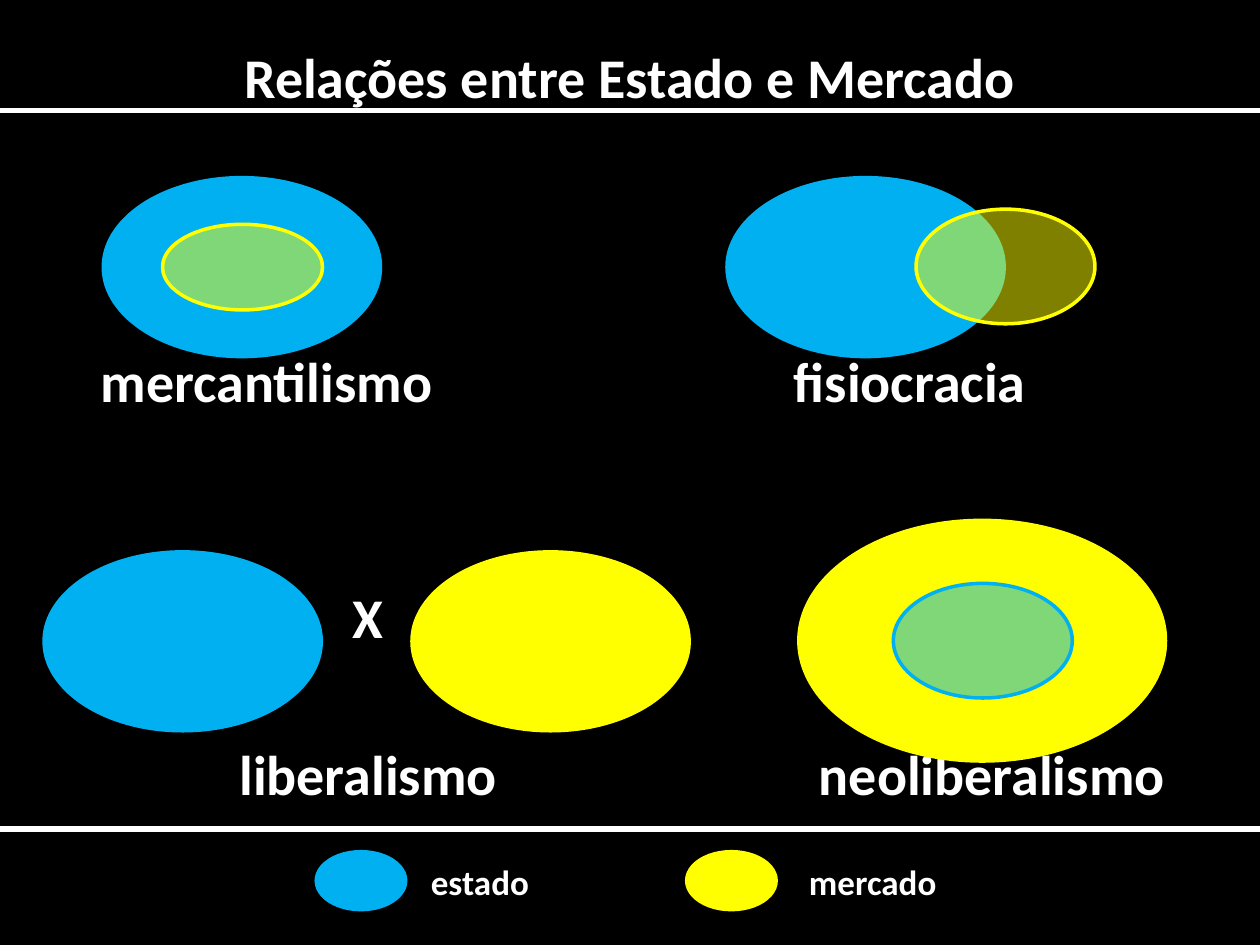
"""Build a slide on how state and market relate in four doctrines."""
import dataclasses

import lxml.etree
import pptx
import pptx.dml.color
import pptx.enum.shapes
import pptx.enum.text
import pptx.oxml.ns
import pptx.util

Inches = pptx.util.Inches
Pt = pptx.util.Pt
Align = pptx.enum.text.PP_ALIGN
Anchor = pptx.enum.text.MSO_ANCHOR


def tint(code):
    """Turn a hex code into a colour."""
    return pptx.dml.color.RGBColor.from_string(code)


def put(target, values):
    """Set each attribute of target from a dict."""
    for name, value in values.items():
        setattr(target, name, value)


@dataclasses.dataclass(frozen=True)
class Theme:
    """Colours, font and sizes of the slide."""

    back: str = "000000"
    ink: str = "FFFFFF"
    state: str = "00B0F0"
    market: str = "FFFF00"
    font: str = "Calibri"
    large: int = 32
    small: int = 20
    edge: int = 2
    rule: int = 3


@dataclasses.dataclass
class Board:
    """Hold the theme and the current slide, and draw on it."""

    theme: Theme
    slide: object

    def ground(self):
        """Fill the background."""
        fill = self.slide.background.fill
        fill.solid()
        fill.fore_color.rgb = tint(self.theme.back)

    def letter(self, shape, text, size, align, anchor):
        """Put formatted text into a shape."""
        frame = shape.text_frame
        put(frame, dict(word_wrap=True, vertical_anchor=anchor, margin_left=0,
                        margin_right=0, margin_top=0, margin_bottom=0))
        line = frame.paragraphs[0]
        line.alignment = align
        run = line.add_run()
        run.text = text
        put(run.font, dict(name=self.theme.font, size=Pt(size), bold=True))
        run.font.color.rgb = tint(self.theme.ink)

    def title(self, text, left, top, width, height):
        """Place and fill the title."""
        shape = self.slide.shapes.title
        put(shape, dict(left=Inches(left), top=Inches(top),
                        width=Inches(width), height=Inches(height)))
        self.letter(shape, text, self.theme.large, Align.CENTER, Anchor.MIDDLE)

    def label(self, text, left, top, width, size):
        """Add a line of text."""
        box = self.slide.shapes.add_textbox(
            Inches(left), Inches(top), Inches(width), Inches(size / 60))
        self.letter(box, text, size, Align.LEFT, Anchor.TOP)

    def oval(self, color, left, top, width, height, clear=False):
        """Add an ellipse, half see-through when clear."""
        shape = self.slide.shapes.add_shape(
            pptx.enum.shapes.MSO_SHAPE.OVAL,
            Inches(left), Inches(top), Inches(width), Inches(height))
        shape.shadow.inherit = False
        shape.fill.solid()
        shape.fill.fore_color.rgb = tint(color)
        shape.line.color.rgb = tint(color)
        shape.line.width = Pt(self.theme.edge)
        if clear:
            qn = pptx.oxml.ns.qn
            node = shape._element.spPr.find(qn("a:solidFill"))[0]
            lxml.etree.SubElement(node, qn("a:alpha")).set("val", "50000")

    def rule(self, top, width):
        """Add a line across the slide."""
        line = self.slide.shapes.add_connector(
            pptx.enum.shapes.MSO_CONNECTOR.STRAIGHT,
            Inches(0), Inches(top), Inches(width), Inches(top))
        line.line.color.rgb = tint(self.theme.ink)
        line.line.width = Pt(self.theme.rule)
        lxml.etree.SubElement(line._element.spPr,
                              pptx.oxml.ns.qn("a:effectLst"))


def main():
    """Build and save the slide."""
    deck = pptx.Presentation()
    put(deck, dict(slide_width=Inches(10), slide_height=Inches(7.5)))
    theme = Theme()
    board = Board(theme, deck.slides.add_slide(deck.slide_layouts[5]))
    board.ground()
    board.title("Relações entre Estado e Mercado", 0.75, 0.21, 8.5, 0.79)

    for text, left, top, width, size in (
            ("mercantilismo", 0.8, 2.75, 2.9, theme.large),
            ("fisiocracia", 6.3, 2.75, 2.2, theme.large),
            ("X", 2.8, 4.62, 0.4, theme.large),
            ("liberalismo", 1.9, 5.87, 2.4, theme.large),
            ("neoliberalismo", 6.5, 5.87, 3.1, theme.large),
            ("estado", 3.42, 6.83, 1.2, theme.small),
            ("mercado", 6.42, 6.83, 1.4, theme.small)):
        board.label(text, left, top, width, size)

    big, mid, key = (2.2, 1.42), (1.42, 0.91), (0.71, 0.46)
    for color, left, top, size, clear in (
            (theme.state, 0.82, 1.41, big, False),
            (theme.state, 0.35, 4.38, big, False),
            (theme.state, 5.77, 1.41, big, False),
            (theme.market, 1.29, 1.78, (1.27, 0.68), True),
            (theme.market, 7.27, 1.66, mid, True),
            (theme.market, 3.27, 4.38, big, False),
            (theme.market, 6.34, 4.13, (2.91, 1.91), False),
            (theme.state, 7.09, 4.63, mid, True),
            (theme.state, 2.51, 6.76, key, False),
            (theme.market, 5.45, 6.76, key, False)):
        board.oval(color, left, top, *size, clear)

    for top in (6.58, 0.88):
        board.rule(top, 10)
    deck.save("out.pptx")


if __name__ == "__main__":
    main()
